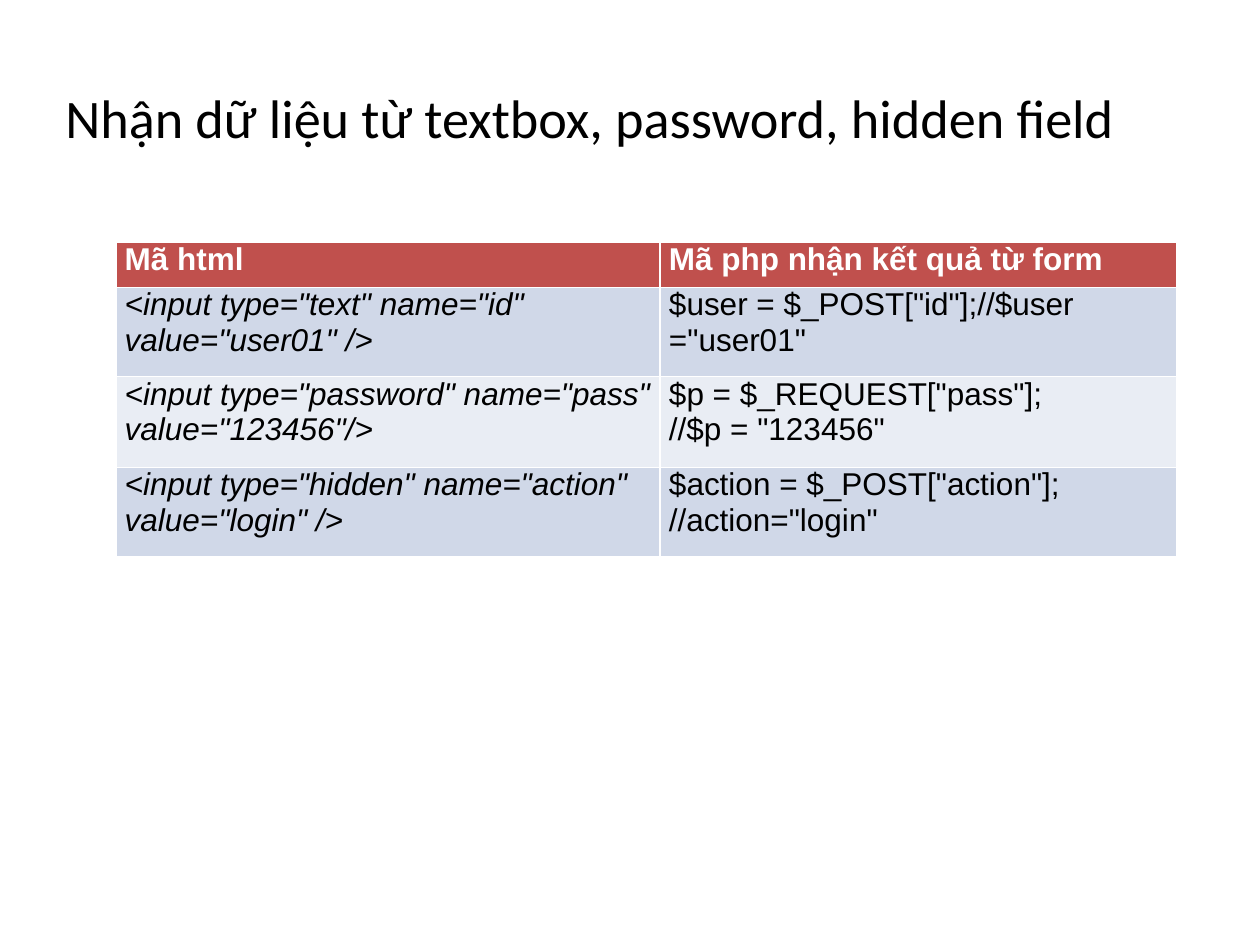
from pptx import Presentation
from pptx.dml.color import RGBColor
from pptx.enum.text import MSO_ANCHOR, PP_ALIGN
from pptx.util import Inches, Pt

WIDE, HIGH = Inches(10), Inches(7.5)
INK = {"text": "000000", "white": "FFFFFF", "head": "C0504D",
       "odd": "D0D8E8", "even": "E9EDF4"}
COLS = (4.32, 4.1)
ROWS = (0.36, 0.71, 0.72, 0.71)
CODE = [
    ("Mã html", "Mã php nhận kết quả từ form"),
    ('<input type="text" name="id" value="user01" />',
     '$user = $_POST["id"];//$user ="user01"'),
    ('<input type="password" name="pass" value="123456"/>',
     '$p = $_REQUEST["pass"];\n//$p = "123456"'),
    ('<input type="hidden" name="action" value="login" />',
     '$action = $_POST["action"];\n//action="login"'),
]


def style(frame, face, size, color, bold=False, slant=False):
    for line in frame.paragraphs:
        line.alignment = PP_ALIGN.LEFT
        for run in line.runs:
            font = run.font
            font.name, font.size = face, Pt(size)
            font.bold, font.italic = bold, slant
            font.color.rgb = RGBColor.from_string(INK[color])


def add_title(slide, box, text):
    frame = slide.shapes.add_textbox(*box).text_frame
    frame.word_wrap = True
    frame.vertical_anchor = MSO_ANCHOR.MIDDLE
    frame.text = text
    style(frame, "Calibri", 31, "text")


def fill_cell(cell, text, row, col):
    head = row == 0
    shade = "head" if head else "odd" if row % 2 else "even"
    cell.fill.solid()
    cell.fill.fore_color.rgb = RGBColor.from_string(INK[shade])
    cell.margin_left = cell.margin_right = Inches(0.07)
    cell.margin_top = cell.margin_bottom = 0
    cell.text_frame.text = text
    style(cell.text_frame, "Arial", 18, "white" if head else "text",
          bold=head, slant=not head and col == 0)


def add_code(slide, box, data):
    left, top, width, height = box
    table = slide.shapes.add_table(len(data), len(COLS), *box).table
    # Columns and rows share out the box
    for part, share in zip(table.columns, COLS):
        part.width = int(width * share / sum(COLS))
    for part, share in zip(table.rows, ROWS):
        part.height = int(height * share / sum(ROWS))
    for row, texts in enumerate(data):
        for col, text in enumerate(texts):
            fill_cell(table.cell(row, col), text, row, col)


def area(left, top, width, height):
    """Turn inches on the slide grid into a box."""
    return [Inches(n) for n in (left, top, width, height)]


def main():
    deck = Presentation()
    deck.slide_width, deck.slide_height = WIDE, HIGH
    slide = deck.slides.add_slide(deck.slide_layouts[6])
    # Heading
    add_title(slide, area(0.42, 0.3, 9.42, 1.25),
              "Nhận dữ liệu từ textbox, password, hidden field")
    # Form markup beside the code that reads it
    add_code(slide, area(0.92, 1.92, sum(COLS), sum(ROWS)), CODE)
    deck.save("out.pptx")


if __name__ == "__main__":
    main()
